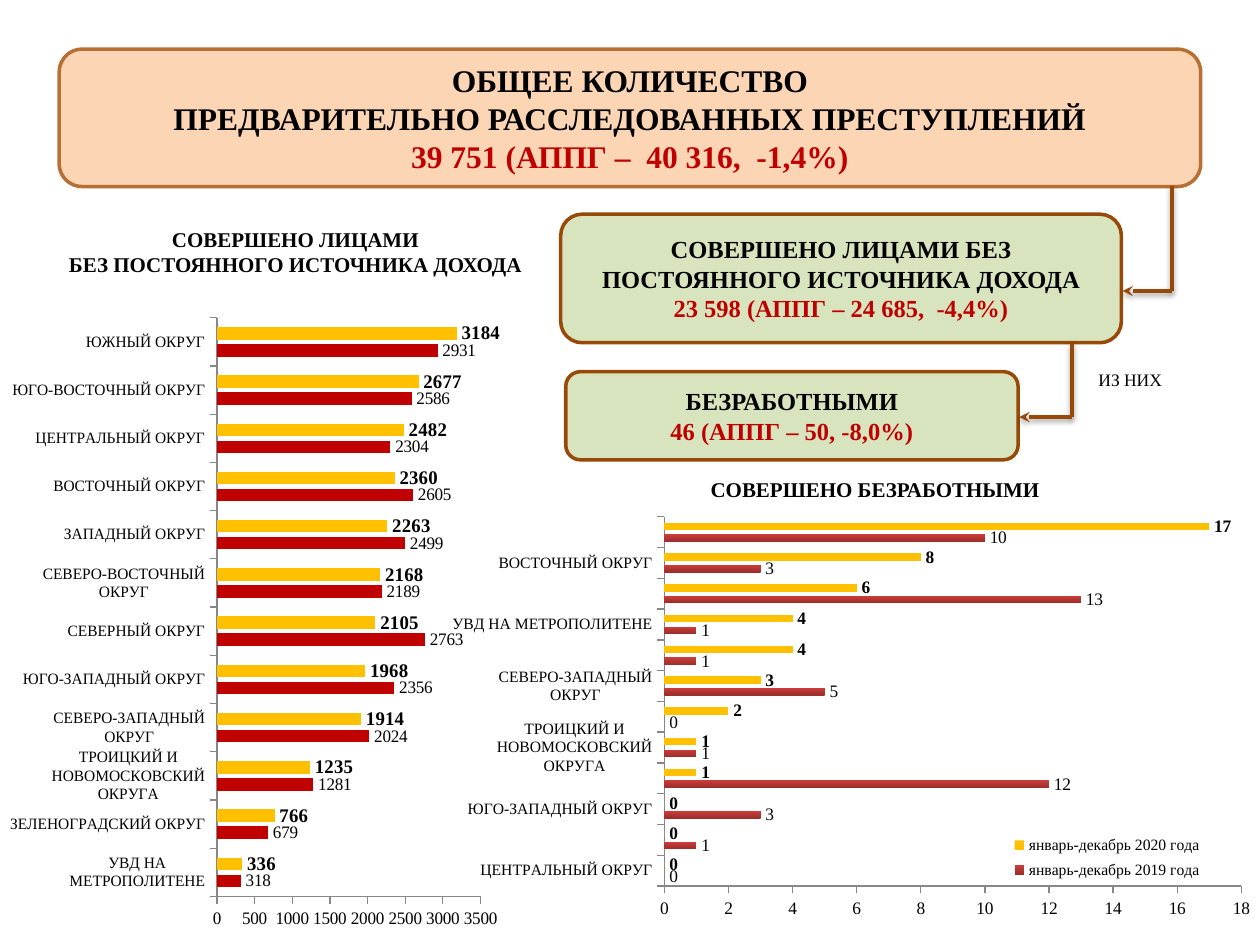
import collections
import lxml.etree
import pptx
import pptx.chart.data
import pptx.dml.color
import pptx.enum.chart
import pptx.enum.shapes
import pptx.enum.text
import pptx.oxml
import pptx.oxml.ns
import pptx.util

Box = collections.namedtuple("Box", "left top width height")
CELL = pptx.util.Inches(0.1)
COLUMNS, ROWS = 100, 75
FONT = "Times New Roman"
THEME = {
    "black": "000000", "red": "C00000", "yellow": "FFC000", "axis": "878787",
    "peach": "FCD5B5", "copper": "B76F34", "green": "D7E4BD", "brown": "984807",
    "brick": ("9B2D2A", "CB3D3A"),
    "banner": 18, "card": 14, "title": 12, "value": 11, "body": 10, "small": 9,
}
YEARS = ("январь-декабрь 2019 года", "январь-декабрь 2020 года")
NO_INCOME = {
    "УВД НА МЕТРОПОЛИТЕНЕ": (318, 336),
    "ЗЕЛЕНОГРАДСКИЙ ОКРУГ": (679, 766),
    "ТРОИЦКИЙ И НОВОМОСКОВСКИЙ ОКРУГА": (1281, 1235),
    "СЕВЕРО-ЗАПАДНЫЙ ОКРУГ": (2024, 1914),
    "ЮГО-ЗАПАДНЫЙ ОКРУГ": (2356, 1968),
    "СЕВЕРНЫЙ ОКРУГ": (2763, 2105),
    "СЕВЕРО-ВОСТОЧНЫЙ ОКРУГ": (2189, 2168),
    "ЗАПАДНЫЙ ОКРУГ": (2499, 2263),
    "ВОСТОЧНЫЙ ОКРУГ": (2605, 2360),
    "ЦЕНТРАЛЬНЫЙ ОКРУГ": (2304, 2482),
    "ЮГО-ВОСТОЧНЫЙ ОКРУГ": (2586, 2677),
    "ЮЖНЫЙ ОКРУГ": (2931, 3184),
}
UNEMPLOYED = {
    "ЦЕНТРАЛЬНЫЙ ОКРУГ": (0, 0),
    "ЮЖНЫЙ ОКРУГ": (1, 0),
    "ЮГО-ЗАПАДНЫЙ ОКРУГ": (3, 0),
    "СЕВЕРНЫЙ ОКРУГ": (12, 1),
    "ТРОИЦКИЙ И НОВОМОСКОВСКИЙ ОКРУГА": (1, 1),
    "ЗАПАДНЫЙ ОКРУГ": (0, 2),
    "СЕВЕРО-ЗАПАДНЫЙ ОКРУГ": (5, 3),
    "ЮГО-ВОСТОЧНЫЙ ОКРУГ": (1, 4),
    "УВД НА МЕТРОПОЛИТЕНЕ": (1, 4),
    "СЕВЕРО-ВОСТОЧНЫЙ ОКРУГ": (13, 6),
    "ВОСТОЧНЫЙ ОКРУГ": (3, 8),
    "ЗЕЛЕНОГРАДСКИЙ ОКРУГ": (10, 17),
}


def color(name):
    """Return the theme colour of that name."""
    return pptx.dml.color.RGBColor.from_string(THEME[name])


def cells(*counts):
    """Turn grid counts into lengths."""
    return [round(count * CELL) for count in counts]


def within(box, left, top, width, height):
    """Return a box placed by an offset inside another."""
    return Box(box.left + left, box.top + top, width, height)


def assign(target, values):
    """Set each named attribute on the target."""
    for name, value in values.items():
        setattr(target, name, value)


def style_font(font, size, color_name="black", bold=False):
    """Give a font its theme size and colour."""
    assign(font, {"name": FONT, "size": pptx.util.Pt(THEME[size]), "bold": bold})
    font.color.rgb = color(color_name)


def write(shape, lines, size, bold=True, align="CENTER", anchor="TOP"):
    """Write (text, colour) lines, one paragraph each."""
    frame = shape.text_frame
    assign(frame, {"word_wrap": True,
                   "vertical_anchor": getattr(pptx.enum.text.MSO_ANCHOR, anchor)})
    for index, (text, color_name) in enumerate(lines):
        paragraph = frame.add_paragraph() if index else frame.paragraphs[0]
        paragraph.alignment = getattr(pptx.enum.text.PP_ALIGN, align)
        run = paragraph.add_run()
        run.text = text
        style_font(run.font, size, color_name, bold)


def add_label(slide, box, lines, size, **options):
    """Add a plain text box."""
    shape = slide.shapes.add_textbox(*cells(*box))
    write(shape, [(line, "black") for line in lines], size, **options)


def add_card(slide, box, fill, line, lines, size):
    """Add a rounded card with centred lines."""
    shape = slide.shapes.add_shape(
        pptx.enum.shapes.MSO_SHAPE.ROUNDED_RECTANGLE, *cells(*box))
    shape.shadow.inherit = False
    shape.fill.solid()
    shape.fill.fore_color.rgb = color(fill)
    shape.line.color.rgb = color(line)
    shape.line.width = pptx.util.Pt(2)
    write(shape, lines, size, anchor="MIDDLE")


def add_corner_arrow(slide, box):
    """Draw a line down the right side of the box and an arrow back to its left."""
    right, bottom = box.left + box.width, box.top + box.height
    points = [(right, box.top), (right, bottom), (box.left, bottom)]
    for start, end in zip(points, points[1:]):
        connector = slide.shapes.add_connector(
            pptx.enum.shapes.MSO_CONNECTOR.STRAIGHT, *cells(*start, *end))
        connector.line.color.rgb = color("brown")
        connector.line.width = pptx.util.Pt(2)
        if end == points[-1]:
            lxml.etree.SubElement(connector.line._get_or_add_ln(),
                                  pptx.oxml.ns.qn("a:tailEnd"), type="stealth")
        connector._element.spPr.append(pptx.oxml.parse_xml(
            f'<a:effectLst {pptx.oxml.ns.nsdecls("a")}>'
            '<a:outerShdw blurRad="40000" dist="20000" dir="5400000" rotWithShape="0">'
            '<a:srgbClr val="000000"><a:alpha val="38000"/></a:srgbClr>'
            '</a:outerShdw></a:effectLst>'))


def set_layout(element, position, shares, inner=False):
    """Place a chart part by shares of the chart's size."""
    for old in element.findall(pptx.oxml.ns.qn("c:layout")):
        element.remove(old)
    modes = '<c:xMode val="edge"/><c:yMode val="edge"/>'
    sizes = "".join(f'<c:{tag} val="{share}"/>' for tag, share in zip("xywh", shares))
    target = '<c:layoutTarget val="inner"/>' if inner else ""
    element.insert(position, pptx.oxml.parse_xml(
        f'<c:layout {pptx.oxml.ns.nsdecls("c")}><c:manualLayout>'
        f'{target}{modes}{sizes}</c:manualLayout></c:layout>'))


def fill_series(series, fill):
    """Fill bars with one theme colour or a two-colour gradient."""
    shades = THEME[fill]
    if isinstance(shades, str):
        series.format.fill.solid()
        series.format.fill.fore_color.rgb = color(fill)
        return
    series.format.fill.gradient()
    series.format.fill.gradient_angle = 90
    for stop, shade in zip(series.format.fill.gradient_stops, shades):
        stop.color.rgb = pptx.dml.color.RGBColor.from_string(shade)


def add_bars(slide, box, table, fills, plot, overlap, scale, label_size, legend=None):
    """Add a clustered bar chart of both years by district."""
    data = pptx.chart.data.CategoryChartData()
    data.categories = list(table)
    for year, values in zip(YEARS, zip(*table.values())):
        data.add_series(year, values)
    chart = slide.shapes.add_chart(
        pptx.enum.chart.XL_CHART_TYPE.BAR_CLUSTERED, *cells(*box), data).chart
    assign(chart, {"has_title": False, "has_legend": legend is not None})
    style_font(chart.font, "body")
    bars = chart.plots[0]
    assign(bars, {"gap_width": 150, "overlap": overlap, "vary_by_categories": False})
    for series, fill, size, bold in zip(bars.series, fills, ("body", label_size), (False, True)):
        fill_series(series, fill)
        labels = series.data_labels
        assign(labels, {"show_value": True,
                        "position": pptx.enum.chart.XL_LABEL_POSITION.OUTSIDE_END})
        style_font(labels.font, size, bold=bold)
    maximum, step = scale
    assign(chart.value_axis, {"minimum_scale": 0, "maximum_scale": maximum, "major_unit": step})
    for axis, size in ((chart.category_axis, "small"), (chart.value_axis, "body")):
        assign(axis, {"has_major_gridlines": False,
                      "major_tick_mark": pptx.enum.chart.XL_TICK_MARK.OUTSIDE})
        axis.format.line.color.rgb = color("axis")
        style_font(axis.tick_labels.font, size)
    set_layout(chart._chartSpace.xpath("c:chart/c:plotArea")[0], 0, plot, inner=True)
    if legend:
        chart.legend.include_in_layout = False
        style_font(chart.legend.font, "small")
        set_layout(chart.legend._element, 1, legend)


def add_banner(slide, box):
    """Add the overall total."""
    add_card(slide, box, "peach", "copper", [
        ("ОБЩЕЕ КОЛИЧЕСТВО", "black"),
        ("ПРЕДВАРИТЕЛЬНО РАССЛЕДОВАННЫХ ПРЕСТУПЛЕНИЙ", "black"),
        ("39 751 (АППГ –  40 316,  -1,4%)", "red")], "banner")


def add_breakdown(slide, box):
    """Add the two subtotal cards and the arrows leading to them."""
    add_card(slide, within(box, 0, 2.2, 44.5, 10.2), "green", "brown", [
        ("СОВЕРШЕНО ЛИЦАМИ БЕЗ ПОСТОЯННОГО ИСТОЧНИКА ДОХОДА", "black"),
        ("23 598 (АППГ – 24 685,  -4,4%)", "red")], "card")
    add_card(slide, within(box, 0.4, 14.7, 35.9, 7), "green", "brown", [
        ("БЕЗРАБОТНЫМИ", "black"), ("46 (АППГ – 50, -8,0%)", "red")], "card")
    add_corner_arrow(slide, within(box, 44.6, 0, 3.9, 8.3))
    add_corner_arrow(slide, within(box, 36.4, 12.4, 4.2, 5.9))
    add_label(slide, within(box, 41.7, 14, 7.4, 2.7), ["ИЗ НИХ"], "body",
              bold=False, align="LEFT")


def add_income_panel(slide, box):
    """Add the titled chart for people without steady income."""
    add_label(slide, within(box, 3.1, 0, 39.1, 5.1),
              ["СОВЕРШЕНО ЛИЦАМИ", "БЕЗ ПОСТОЯННОГО ИСТОЧНИКА ДОХОДА"], "title")
    add_bars(slide, within(box, 0, 5.7, 38.9, 50.5), NO_INCOME, ("red", "yellow"),
             (0.41, 0.04, 0.55, 0.91), -36, (3500, 500), "value")


def add_unemployed_panel(slide, box):
    """Add the titled chart for the unemployed, with the legend."""
    add_label(slide, within(box, 7.8, 0, 51.5, 3), ["СОВЕРШЕНО БЕЗРАБОТНЫМИ"], "title")
    add_bars(slide, within(box, 0, 3.4, 63.3, 32.2), UNEMPLOYED, ("brick", "yellow"),
             (0.26, 0.01, 0.73, 0.91), -53, (18, 2), "body", (0.69, 0.78, 0.26, 0.14))


def main():
    """Build and save the presentation."""
    presentation = pptx.Presentation()
    assign(presentation, {"slide_width": COLUMNS * CELL, "slide_height": ROWS * CELL})
    slide = presentation.slides.add_slide(presentation.slide_layouts[6])
    add_banner(slide, Box(4.7, 3.9, 90.6, 10.9))
    add_breakdown(slide, Box(44.5, 14.8, 49.1, 21.7))
    add_income_panel(slide, Box(0.8, 17.5, 42.2, 56.2))
    add_unemployed_panel(slide, Box(35.9, 37.3, 63.3, 35.6))
    presentation.save("out.pptx")


if __name__ == "__main__":
    main()
